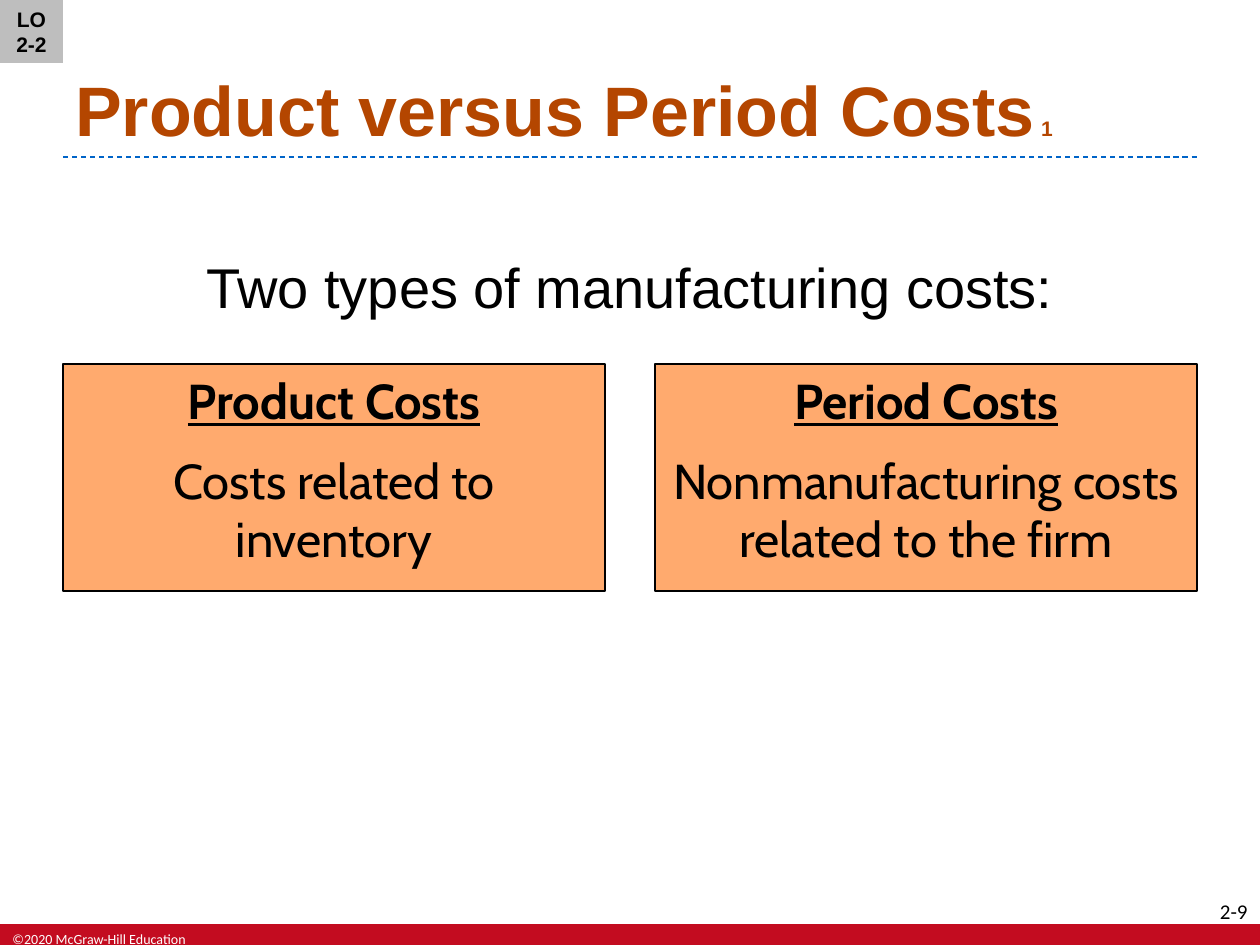
from pptx import Presentation
from pptx.dml.color import RGBColor
from pptx.enum.dml import MSO_LINE
from pptx.enum.shapes import MSO_CONNECTOR, MSO_SHAPE
from pptx.enum.text import MSO_ANCHOR, PP_ALIGN
from pptx.oxml.ns import qn
from pptx.util import Pt
from lxml import etree

PX_PER_INCH = 126


def px(n):
    return round(n * 914400 / PX_PER_INCH)


def rgb(color):
    return RGBColor.from_string(color)


class Deck:
    BLACK, WHITE = "000000", "FFFFFF"
    ORANGE, PEACH, GRAY = "B44600", "FFAA6E", "BEBEBE"
    RED, BLUE = "C30C20", "0064C8"

    def __init__(self, width, height):
        self.prs = Presentation()
        self.prs.slide_width, self.prs.slide_height = px(width), px(height)
        self.s = self.prs.slides.add_slide(self.prs.slide_layouts[6])

    def rect(self, x, y, w, h, fill, line=None):
        sp = self.s.shapes.add_shape(MSO_SHAPE.RECTANGLE, px(x), px(y), px(w), px(h))
        sp.shadow.inherit = False
        sp.fill.solid()
        sp.fill.fore_color.rgb = rgb(fill)
        if line:
            sp.line.color.rgb = rgb(line)
            sp.line.width = Pt(1.5)
        else:
            sp.line.fill.background()
        return sp

    def textbox(self, x, y, w, h, anchor=MSO_ANCHOR.TOP):
        sp = self.s.shapes.add_textbox(px(x), px(y), px(w), px(h))
        self.frame(sp, anchor)
        return sp

    def frame(self, sp, anchor):
        tf = sp.text_frame
        tf.word_wrap = True
        tf.vertical_anchor = anchor

    def para(self, sp, align=PP_ALIGN.LEFT, after=0, before=0):
        tf = sp.text_frame
        p = tf.add_paragraph() if tf.paragraphs[0].runs else tf.paragraphs[0]
        p.alignment = align
        p.space_before, p.space_after = Pt(before), Pt(after)
        return p

    def run(self, p, text, size, font="Arial", color=BLACK, bold=False, underline=False):
        r = p.add_run()
        r.text = text
        r.font.name, r.font.size = font, Pt(size)
        r.font.color.rgb = rgb(color)
        r.font.bold, r.font.underline = bold, underline

    def dashed_line(self, x1, x2, y, color):
        c = self.s.shapes.add_connector(MSO_CONNECTOR.STRAIGHT, px(x1), px(y), px(x2), px(y))
        c.line.color.rgb = rgb(color)
        c.line.width = Pt(0.75)
        c.line.dash_style = MSO_LINE.DASH
        etree.SubElement(c._element.spPr, qn("a:effectLst"))

    def card(self, x, y, w, h, heading, body):
        sp = self.rect(x, y, w, h, self.PEACH, self.BLACK)
        self.frame(sp, MSO_ANCHOR.TOP)
        p = self.para(sp, PP_ALIGN.CENTER, after=6)
        self.run(p, heading, 28, "Cabin", bold=True, underline=True)
        p = self.para(sp, PP_ALIGN.CENTER, after=6, before=6)
        self.run(p, body, 28, "Cabin")


def main():
    d = Deck(1260, 945)
    margin, content = 63, 1134

    # Footer band, copyright and page number
    d.rect(0, 924, 1260, 21, d.RED)
    p = d.para(d.textbox(0, 924, 202, 21))
    d.run(p, "©2020 McGraw-Hill Education", 8, "Calibri", d.WHITE)
    p = d.para(d.textbox(1192, 892, 68, 25), PP_ALIGN.RIGHT)
    d.run(p, "2-9", 12, "Calibri")

    # Title and rule
    d.dashed_line(margin, margin + content, 157, d.BLUE)
    p = d.para(d.textbox(margin, 6, content, 151, MSO_ANCHOR.BOTTOM))
    d.run(p, "Product versus Period Costs", 40, color=d.ORANGE, bold=True)
    d.run(p, " 1", 12, color=d.ORANGE, bold=True)

    # Lead-in
    p = d.para(d.textbox(margin, 242, content, 88, MSO_ANCHOR.MIDDLE), PP_ALIGN.CENTER, after=6)
    d.run(p, "Two types of manufacturing costs:", 32)

    # Cost cards
    gap = 50
    card_w = (content - gap) // 2
    cards = [
        ("Product Costs", "Costs related to inventory"),
        ("Period Costs", "Nonmanufacturing costs related to the firm"),
    ]
    for i, (heading, body) in enumerate(cards):
        d.card(margin + i * (card_w + gap), 364, card_w, 227, heading, body)

    # Learning objective tag
    tag = d.rect(0, 0, 63, 63, d.GRAY)
    d.frame(tag, MSO_ANCHOR.MIDDLE)
    p = d.para(tag, PP_ALIGN.CENTER, after=6)
    d.run(p, "LO 2-2", 12, bold=True)

    d.prs.save("out.pptx")


if __name__ == "__main__":
    main()
